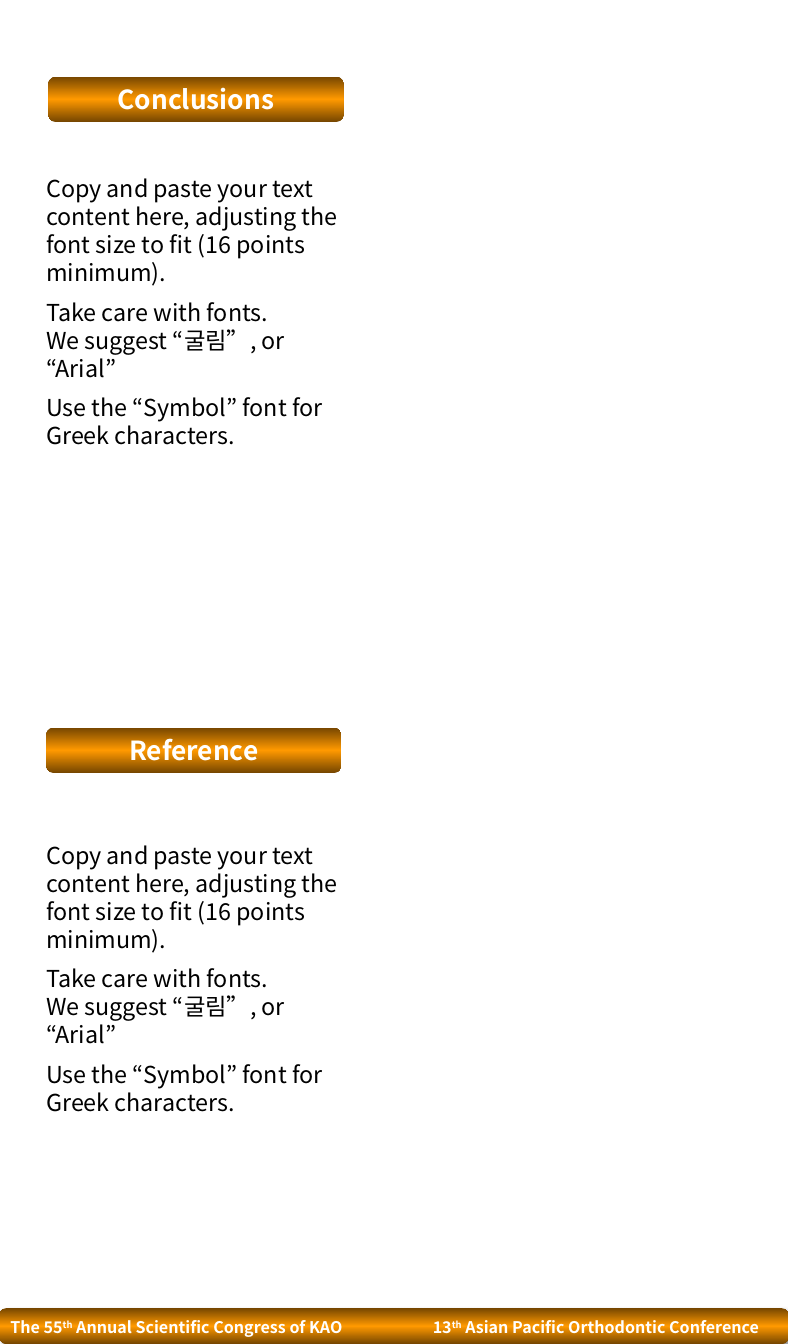
import pptx
import pptx.dml.color
import pptx.enum.shapes
import pptx.enum.text
import pptx.oxml
import pptx.oxml.ns
import pptx.util
import lxml.etree

Pt = pptx.util.Pt
ALIGN = pptx.enum.text.PP_ALIGN
ANCHOR = pptx.enum.text.MSO_ANCHOR
qn = pptx.oxml.ns.qn
NAMESPACE = pptx.oxml.ns.nsdecls("a")

COLORS = {"edge": "764600", "middle": "FF9900", "light": "FFFFFF",
          "text": "000000", "shadow": "000000"}
ADVICE = [
    ["Copy and paste your text content here, adjusting the font size "
     "to fit (16 points minimum)."],
    ["Take care with fonts.", "We suggest “굴림”, or “Arial”"],
    ["Use the “Symbol” font for Greek characters."],
]


class Poster:
    font = "Noto Sans CJK KR"

    def __init__(self, page):
        self.page = page

    def bar(self, left, top, width, height):
        """Rounded bar, dark at the top and bottom edges."""
        bar = self.page.shapes.add_shape(
            pptx.enum.shapes.MSO_SHAPE.ROUNDED_RECTANGLE,
            Pt(left), Pt(top), Pt(width), Pt(height))
        bar.shadow.inherit = False
        bar.line.fill.background()
        bar.fill.gradient()
        bar.fill.gradient_angle = 270
        stops = bar.fill._fill._gradFill.find(qn("a:gsLst"))
        for stop in list(stops):
            stops.remove(stop)
        for position, name in ((0, "edge"), (50, "middle"), (100, "edge")):
            stops.append(pptx.oxml.parse_xml(
                f'<a:gs {NAMESPACE} pos="{position * 1000}">'
                f'<a:srgbClr val="{COLORS[name]}"/></a:gs>'))
        return bar

    def soft_shadow(self, shape):
        effects = shape._element.spPr.find(qn("a:effectLst"))
        effects.append(pptx.oxml.parse_xml(
            f'<a:outerShdw {NAMESPACE} blurRad="{Pt(4)}" dist="{Pt(3)}" dir="2700000">'
            f'<a:srgbClr val="{COLORS["shadow"]}"><a:alpha val="40000"/></a:srgbClr>'
            '</a:outerShdw>'))

    def frame(self, shape, side, edge, anchor=ANCHOR.TOP):
        frame = shape.text_frame
        frame.word_wrap = True
        frame.vertical_anchor = anchor
        frame.margin_left = frame.margin_right = Pt(side)
        frame.margin_top = frame.margin_bottom = Pt(edge)
        return frame

    def textbox(self, left, top, width, height, side, edge):
        box = self.page.shapes.add_textbox(Pt(left), Pt(top), Pt(width), Pt(height))
        return self.frame(box, side, edge)

    def span(self, para, text, size, color, bold=False, raised=False):
        span = para.add_run()
        span.text = text
        span.font.name = self.font
        span.font.size = Pt(size)
        span.font.bold = bold
        span.font.color.rgb = pptx.dml.color.RGBColor.from_string(COLORS[color])
        properties = span.font._element
        lxml.etree.SubElement(properties, qn("a:ea"), typeface=self.font)
        if raised:
            properties.set("baseline", "30000")

    def heading(self, left, top, text):
        bar = self.bar(left, top, 202.3, 31)
        para = self.frame(bar, 5.76, 2.88, ANCHOR.MIDDLE).paragraphs[0]
        para.alignment = ALIGN.CENTER
        self.span(para, text, 18, "light", bold=True)

    def body(self, top, paragraphs):
        frame = self.textbox(25.9, top, 215.3, 198.7, 5.76, 2.88)
        for index, lines in enumerate(paragraphs):
            para = frame.add_paragraph() if index else frame.paragraphs[0]
            para.space_before = Pt(8 if index else 0)
            para.line_spacing = Pt(19.2)
            for number, line in enumerate(lines):
                if number:
                    para.add_line_break()
                self.span(para, line, 16, "text")

    def footer(self, spans, tab):
        self.soft_shadow(self.bar(0, 897.1, 540, 24.5))
        para = self.textbox(0, 900, 540, 20.9, 7.2, 3.6).paragraphs[0]
        para.line_spacing = Pt(13.2)
        para._p.get_or_add_pPr().append(pptx.oxml.parse_xml(
            f'<a:tabLst {NAMESPACE}><a:tab pos="{Pt(tab)}" algn="l"/></a:tabLst>'))
        for text, raised in spans:
            self.span(para, text, 11, "light", bold=True, raised=raised)


def main():
    deck = pptx.Presentation()
    deck.slide_width, deck.slide_height = Pt(540), Pt(921.6)
    poster = Poster(deck.slides.add_slide(deck.slide_layouts[6]))

    # Sections
    for left, top, title, body_top in ((33.1, 52.6, "Conclusions", 116.6),
                                       (31.7, 499, "Reference", 573.8)):
        poster.heading(left, top, title)
        poster.body(body_top, ADVICE)

    # Footer
    poster.footer([("The 55", False), ("th", True),
                   (" Annual Scientific Congress of KAO\t13", False),
                   ("th", True), (" Asian Pacific Orthodontic Conference", False)],
                  tab=289.5)
    deck.save("out.pptx")


if __name__ == "__main__":
    main()
